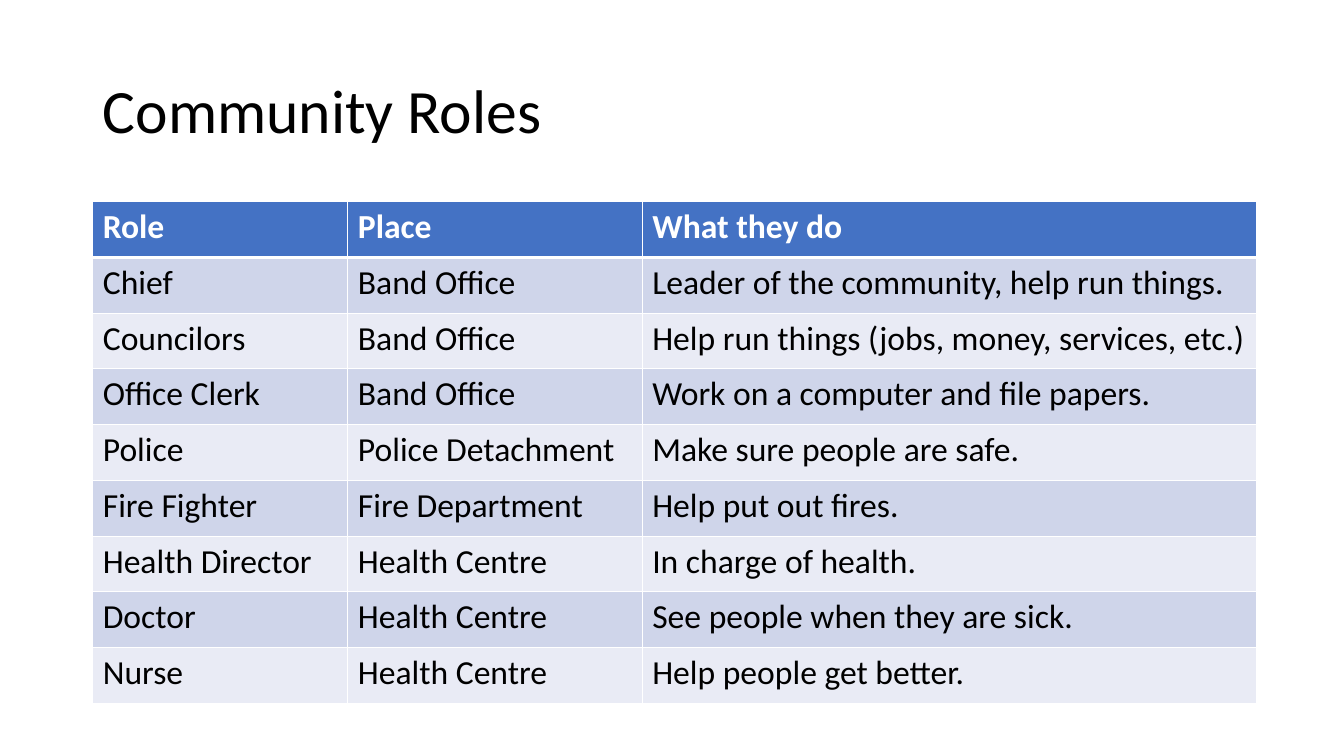
from lxml import etree
from pptx import Presentation
from pptx import util as u
from pptx.dml.color import RGBColor
from pptx.enum import text
from pptx.oxml.ns import qn

PX = 9144
FONT = "Calibri"
COLORS = {
    "ink": "000000",
    "paper": "FFFFFF",
    "header": "4472C4",
    "band_dark": "CFD5EA",
    "band_light": "E9EBF5",
}
COLUMN_WIDTHS = (253, 292, 609)
ROLES = [
    ("Role", "Place", "What they do"),
    ("Chief", "Band Office", "Leader of the community, help run things."),
    ("Councilors", "Band Office", "Help run things (jobs, money, services, etc.)"),
    ("Office Clerk", "Band Office", "Work on a computer and file papers."),
    ("Police", "Police Detachment", "Make sure people are safe."),
    ("Fire Fighter", "Fire Department", "Help put out fires."),
    ("Health Director", "Health Centre", "In charge of health."),
    ("Doctor", "Health Centre", "See people when they are sick."),
    ("Nurse", "Health Centre", "Help people get better."),
]


def color(name):
    """Return the named colour."""
    return RGBColor.from_string(COLORS[name])


def scale(box):
    """Turn a box in px into EMU lengths."""
    return [u.Emu(length * PX) for length in box]


def style_paragraph(para, size, ink, bold=False):
    """Set the font of a whole paragraph."""
    para.font.name = FONT
    para.font.size = u.Pt(size)
    para.font.bold = bold
    para.font.color.rgb = color(ink)


def add_borders(cell, top, bottom):
    """Draw white borders, with top and bottom widths in points."""
    properties = cell._tc.get_or_add_tcPr()
    for side, width in (("L", 1), ("R", 1), ("T", top), ("B", bottom)):
        line = etree.SubElement(properties, qn(f"a:ln{side}"), w=str(u.Pt(width)))
        fill = etree.SubElement(line, qn("a:solidFill"))
        etree.SubElement(fill, qn("a:srgbClr"), val=COLORS["paper"])


def place_title(page, box, words):
    """Fill the title placeholder and move it to the box."""
    title = page.shapes.title
    title.left, title.top, title.width, title.height = scale(box)
    frame = title.text_frame
    frame.text = words
    frame.word_wrap = True
    frame.auto_size = text.MSO_AUTO_SIZE.NONE
    frame.vertical_anchor = text.MSO_ANCHOR.MIDDLE
    para = frame.paragraphs[0]
    para.alignment = text.PP_ALIGN.LEFT
    para.line_spacing = 0.9
    style_paragraph(para, 44, "ink")


def place_roles(page, box):
    """Place the banded table of roles in the box."""
    table = page.shapes.add_table(len(ROLES), len(COLUMN_WIDTHS), *scale(box)).table
    for column, width in zip(table.columns, COLUMN_WIDTHS):
        column.width = u.Emu(width * PX)
    for index, role in enumerate(ROLES):
        table.rows[index].height = u.Emu(box[3] * PX // len(ROLES))
        header = index == 0
        band = "header" if header else "band_dark" if index % 2 else "band_light"
        for cell, words in zip(table.rows[index].cells, role):
            cell.text = words
            style_paragraph(
                cell.text_frame.paragraphs[0], 24, "paper" if header else "ink", header
            )
            add_borders(cell, 3 if index == 1 else 1, 3 if header else 1)
            cell.fill.solid()
            cell.fill.fore_color.rgb = color(band)


def main():
    """Build and save the deck."""
    deck = Presentation()
    deck.slide_width, deck.slide_height = scale((1333, 750))
    page = deck.slides.add_slide(deck.slide_layouts[5])
    page.background.fill.solid()
    page.background.fill.fore_color.rgb = color("paper")
    place_title(page, (92, 40, 1150, 145), "Community Roles")
    place_roles(page, (92, 200, sum(COLUMN_WIDTHS), 498))
    deck.save("out.pptx")


if __name__ == "__main__":
    main()
